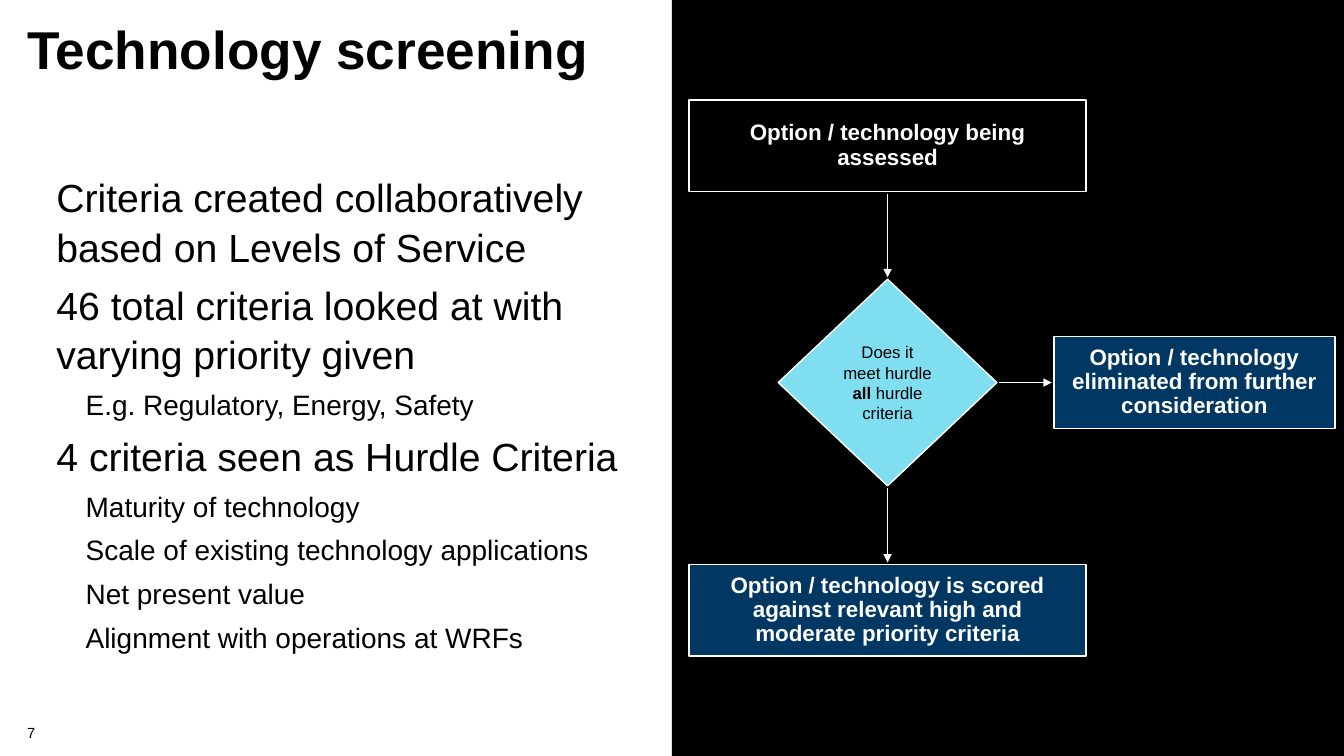
"""Build the technology screening slide with its criteria list and decision flow."""
import pptx
import pptx.util
import pptx.dml.color
import pptx.enum.shapes
import pptx.enum.text
import pptx.oxml.ns
import lxml.etree

Inches, Pt = pptx.util.Inches, pptx.util.Pt
RGBColor = pptx.dml.color.RGBColor
SHAPE = pptx.enum.shapes.MSO_SHAPE
ANCHOR = pptx.enum.text.MSO_ANCHOR
ALIGN = pptx.enum.text.PP_ALIGN

TITLE = "Technology screening"
PAGE_NUMBER = "7"
CRITERIA = [
    (1, "Criteria created collaboratively based on Levels of Service"),
    (1, "46 total criteria looked at with varying priority given"),
    (2, "E.g. Regulatory, Energy, Safety"),
    (1, "4 criteria seen as Hurdle Criteria"),
    (2, "Maturity of technology"),
    (2, "Scale of existing technology applications"),
    (2, "Net present value"),
    (2, "Alignment with operations at WRFs"),
]
QUESTION = [("Does it meet hurdle ", False), ("all ", True), ("hurdle criteria", False)]

BLACK = RGBColor(0x00, 0x00, 0x00)
WHITE = RGBColor(0xFF, 0xFF, 0xFF)
NAVY = RGBColor(0x00, 0x37, 0x63)
AQUA = RGBColor(0x7F, 0xDE, 0xF0)

FONT = "Arial"
WIDTH, HEIGHT = 13.34, 7.5
MARGIN = 0.27
TEXT_WIDTH = 6.16
INDENT = 0.29
LEVEL_SIZES = {1: 28, 2: 20}
FLOW_CENTER = 8.81
BOX_WIDTH, BOX_HEIGHT = 3.94, 0.91
ARROW_GAP = 0.02

BOXES = {
    "start": ("Option / technology being assessed", BLACK,
              (FLOW_CENTER - BOX_WIDTH / 2, 0.99, BOX_WIDTH, BOX_HEIGHT)),
    "scored": ("Option / technology is scored against relevant high and moderate priority criteria", NAVY,
               (FLOW_CENTER - BOX_WIDTH / 2, 5.6, BOX_WIDTH, BOX_HEIGHT)),
    "eliminated": ("Option / technology eliminated from further consideration", NAVY,
                   (10.46, 3.34, 2.79, BOX_HEIGHT)),
}
DECISION = (FLOW_CENTER - 2.17 / 2, 2.77, 2.17, 2.05)


def format_runs(paragraph, size, color, bold=False):
    for run in paragraph.runs:
        run.font.name = FONT
        run.font.size = Pt(size)
        run.font.color.rgb = color
        run.font.bold = bold


def set_frame(shape, horizontal=0, vertical=0, anchor=ANCHOR.TOP):
    frame = shape.text_frame
    frame.word_wrap = True
    frame.auto_size = pptx.enum.text.MSO_AUTO_SIZE.NONE
    frame.vertical_anchor = anchor
    frame.margin_left = frame.margin_right = Inches(horizontal)
    frame.margin_top = frame.margin_bottom = Inches(vertical)
    return frame


def add_block(slide, kind, area, fill, line=WHITE):
    shape = slide.shapes.add_shape(kind, *map(Inches, area))
    shape.shadow.inherit = False
    shape.fill.solid()
    shape.fill.fore_color.rgb = fill
    if line is None:
        shape.line.fill.background()
    else:
        shape.line.color.rgb = line
        shape.line.width = Pt(1)
    return shape


def add_arrow(slide, start, end):
    connector = slide.shapes.add_connector(
        pptx.enum.shapes.MSO_CONNECTOR.STRAIGHT, *map(Inches, start + end))
    connector.line.color.rgb = WHITE
    connector.line.width = Pt(1)
    line = connector.line._get_or_add_ln()
    lxml.etree.SubElement(line, pptx.oxml.ns.qn("a:tailEnd"), type="triangle")
    lxml.etree.SubElement(connector._element.spPr, pptx.oxml.ns.qn("a:effectLst"))


def add_title(slide):
    title = slide.shapes.title
    title.left, title.top, title.width, title.height = map(Inches, (MARGIN, 0.23, TEXT_WIDTH, 0.58))
    frame = set_frame(title)
    frame.text = TITLE
    paragraph = frame.paragraphs[0]
    paragraph.alignment = ALIGN.LEFT
    paragraph.line_spacing = 0.9
    format_runs(paragraph, 38, BLACK, True)


def add_criteria(slide):
    box = slide.shapes.add_textbox(*map(Inches, (MARGIN, 1.7, TEXT_WIDTH, 5.29)))
    frame = set_frame(box)
    for index, (level, text) in enumerate(CRITERIA):
        paragraph = frame.add_paragraph() if index else frame.paragraphs[0]
        paragraph.text = text
        paragraph.level = level - 1
        paragraph._p.get_or_add_pPr().set("marL", str(Inches(INDENT * level)))
        paragraph.line_spacing = 1.05
        paragraph.space_before = Pt(3 if index else 0)
        paragraph.space_after = Pt(3)
        format_runs(paragraph, LEVEL_SIZES[level], BLACK)


def add_flow(slide):
    decision = add_block(slide, SHAPE.DIAMOND, DECISION, AQUA)
    paragraph = set_frame(decision, 0.08, 0.05, ANCHOR.MIDDLE).paragraphs[0]
    paragraph.alignment = ALIGN.CENTER
    for text, bold in QUESTION:
        paragraph.add_run().text = text
    format_runs(paragraph, 12, BLACK)
    for run, (text, bold) in zip(paragraph.runs, QUESTION):
        run.font.bold = bold

    for text, fill, area in BOXES.values():
        frame = set_frame(add_block(slide, SHAPE.RECTANGLE, area, fill), 0.15, 0.1, ANCHOR.MIDDLE)
        frame.text = text
        paragraph = frame.paragraphs[0]
        paragraph.alignment = ALIGN.CENTER
        paragraph.line_spacing = 0.9
        format_runs(paragraph, 16, WHITE, True)

    left, top, width, height = DECISION
    middle = top + height / 2
    start_bottom = BOXES["start"][2][1] + BOX_HEIGHT
    scored_top = BOXES["scored"][2][1]
    eliminated_left = BOXES["eliminated"][2][0]
    add_arrow(slide, (FLOW_CENTER, start_bottom + ARROW_GAP), (FLOW_CENTER, top - ARROW_GAP))
    add_arrow(slide, (FLOW_CENTER, top + height + ARROW_GAP), (FLOW_CENTER, scored_top - ARROW_GAP))
    add_arrow(slide, (left + width + ARROW_GAP, middle), (eliminated_left - ARROW_GAP, middle))


def add_page_number(slide):
    box = slide.shapes.add_textbox(*map(Inches, (MARGIN, 7.15, 0.57, 0.24)))
    frame = set_frame(box, anchor=ANCHOR.MIDDLE)
    frame.text = PAGE_NUMBER
    format_runs(frame.paragraphs[0], 10.5, BLACK)


def main():
    presentation = pptx.Presentation()
    presentation.slide_width, presentation.slide_height = Inches(WIDTH), Inches(HEIGHT)
    slide = presentation.slides.add_slide(presentation.slide_layouts[5])
    add_block(slide, SHAPE.RECTANGLE, (WIDTH / 2, 0, WIDTH / 2, HEIGHT), BLACK, None)
    add_title(slide)
    add_criteria(slide)
    add_flow(slide)
    add_page_number(slide)
    presentation.save("out.pptx")


if __name__ == "__main__":
    main()
